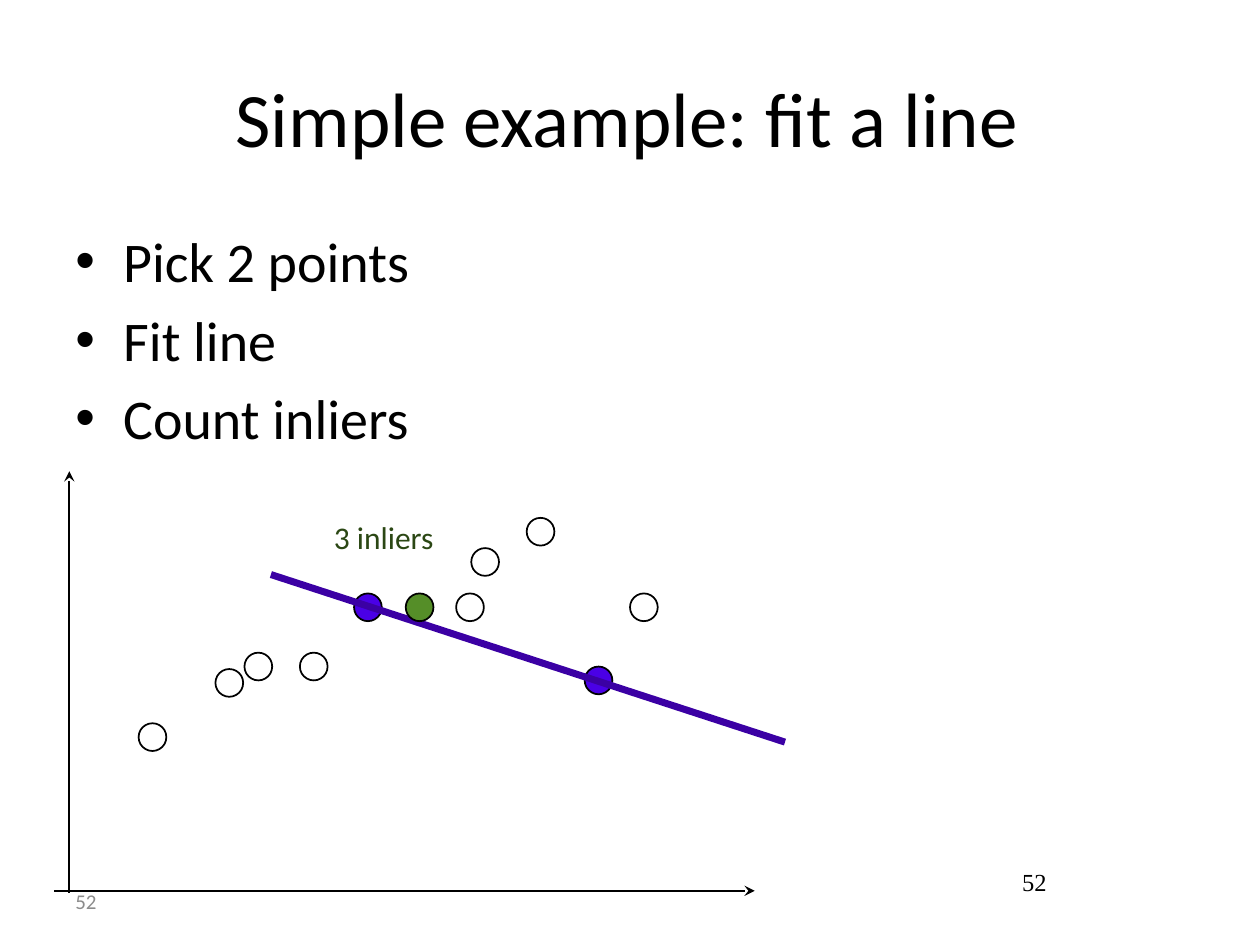
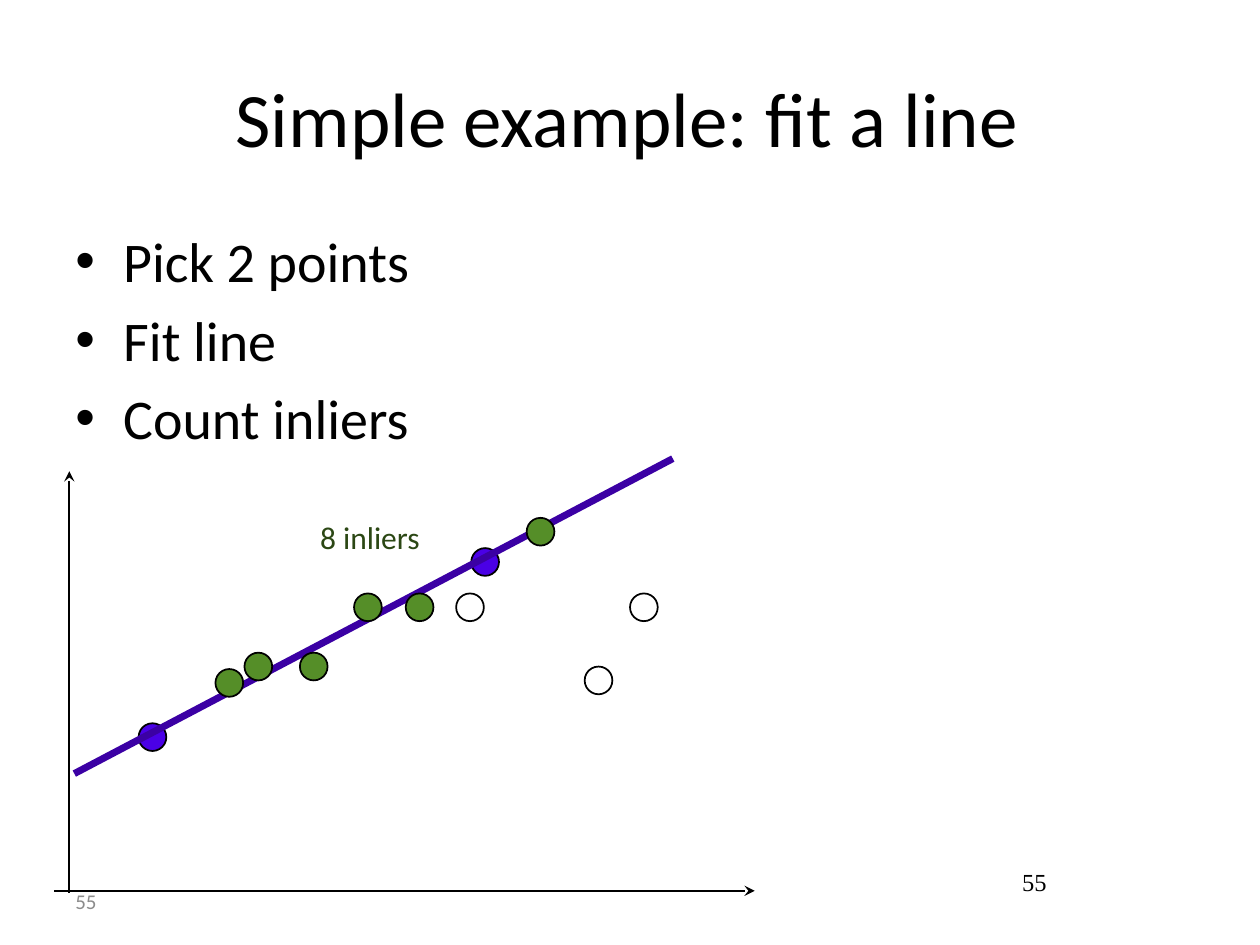
"""Build two slides that fit a line to points and count the inliers."""
import dataclasses

import pptx
import pptx.dml.color
import pptx.enum.shapes
import pptx.enum.text
import pptx.oxml.ns
import pptx.util
from lxml import etree

Inches = pptx.util.Inches
Pt = pptx.util.Pt
ALIGN = pptx.enum.text.PP_ALIGN
ANCHOR = pptx.enum.text.MSO_ANCHOR


@dataclasses.dataclass(frozen=True)
class Theme:
    """Hold the fonts, colours and sizes shared by the slides."""
    font: str = "Calibri"
    number_font: str = "Times New Roman"
    black: str = "000000"
    white: str = "FFFFFF"
    footer: str = "8C8C8C"
    sample: str = "4A00E6"
    fitted_line: str = "3B00A4"
    inlier: str = "558E28"
    inlier_label: str = "2B4714"
    title_size: int = 44
    bullet_size: int = 32
    label_size: int = 18
    number_size: int = 14
    footer_size: int = 12
    thin: int = 1
    thick: int = 4
    point_size: float = 0.22


THEME = Theme()
TITLE = "Simple example: fit a line"
STEPS = ("Pick 2 points", "Fit line", "Count inliers")
PLACEHOLDER_INSETS = (0.1, 0.05, 0.14, 0.05)

POINTS = {
    "lowest": (1.1, 5.74),
    "left": (1.71, 5.31),
    "left pair": (1.94, 5.18),
    "right pair": (2.38, 5.18),
    "row first": (2.81, 4.71),
    "row second": (3.22, 4.71),
    "row third": (3.62, 4.71),
    "upper": (3.74, 4.35),
    "highest": (4.18, 4.11),
    "below line": (4.64, 5.29),
    "far right": (5, 4.71),
}


@dataclasses.dataclass(frozen=True)
class Fit:
    """Describe one line fit and the points that support it."""
    number: int
    samples: tuple
    inliers: tuple
    start: tuple
    end: tuple
    label: str
    label_left: float


FITS = (
    Fit(52, ("row first", "below line"), ("row second",),
        (2.15, 4.56), (6.23, 5.89), "3 inliers", 2.61),
    Fit(55, ("lowest", "upper"),
        ("left", "left pair", "right pair", "row first", "row second", "highest"),
        (0.59, 6.14), (5.34, 3.64), "8 inliers", 2.5),
)


def rgb(value):
    """Return a colour from its hexadecimal value."""
    return pptx.dml.color.RGBColor.from_string(value)


def add_child(parent, tag, **attributes):
    """Append a DrawingML element to a parent."""
    return etree.SubElement(parent, pptx.oxml.ns.qn(tag), attributes)


def add_text(slide, box, lines, size, color=THEME.black, font=THEME.font,
             align=ALIGN.LEFT, anchor=ANCHOR.TOP, insets=(0.1, 0.05, 0.1, 0.05)):
    """Add a text box with one run per line and return its paragraphs."""
    frame = slide.shapes.add_textbox(*map(Inches, box)).text_frame
    frame.word_wrap = True
    frame.vertical_anchor = anchor
    (frame.margin_left, frame.margin_top,
     frame.margin_right, frame.margin_bottom) = map(Inches, insets)
    for index, line in enumerate(lines):
        paragraph = frame.add_paragraph() if index else frame.paragraphs[0]
        paragraph.alignment = align
        run = paragraph.add_run()
        run.text = line
        run.font.name = font
        run.font.size = Pt(size)
        run.font.color.rgb = rgb(color)
    return frame.paragraphs


def add_bullet(paragraph):
    """Give a paragraph a hanging bullet and proportional space before it."""
    properties = paragraph._p.get_or_add_pPr()
    properties.set("marL", str(Inches(0.38)))
    properties.set("indent", str(Inches(-0.38)))
    add_child(add_child(properties, "a:spcBef"), "a:spcPct", val="20000")
    add_child(properties, "a:buFont", typeface="Arial")
    add_child(properties, "a:buChar", char="•")


def add_line(slide, start, end, color, width, arrow=False):
    """Add a straight line, with an optional arrowhead at its start."""
    connector = slide.shapes.add_connector(
        pptx.enum.shapes.MSO_CONNECTOR.STRAIGHT, *map(Inches, (*start, *end)))
    connector.line.color.rgb = rgb(color)
    connector.line.width = Pt(width)
    if arrow:
        add_child(connector.line._get_or_add_ln(), "a:headEnd", type="stealth")
    add_child(connector._element.spPr, "a:effectLst")


def add_point(shapes, name, color):
    """Add a data point to a slide or a group."""
    left, top = POINTS[name]
    size = THEME.point_size
    point = shapes.add_shape(pptx.enum.shapes.MSO_SHAPE.OVAL,
                             *map(Inches, (left, top, size, size)))
    point.shadow.inherit = False
    point.fill.solid()
    point.fill.fore_color.rgb = rgb(color)
    point.line.color.rgb = rgb(THEME.black)
    point.line.width = Pt(THEME.thin)


def add_frame(slide, number):
    """Add the footer, title, steps and page number."""
    add_text(slide, (0.5, 6.95, 2.33, 0.4), [str(number)], THEME.footer_size,
             THEME.footer, anchor=ANCHOR.MIDDLE)
    add_text(slide, (0.5, 0.3, 9, 1.25), [TITLE], THEME.title_size,
             align=ALIGN.CENTER, anchor=ANCHOR.MIDDLE, insets=PLACEHOLDER_INSETS)
    for paragraph in add_text(slide, (0.5, 1.75, 9, 4.95), STEPS,
                              THEME.bullet_size, insets=PLACEHOLDER_INSETS):
        add_bullet(paragraph)
    add_text(slide, (8.05, 6.83, 0.32, 0.32), [str(number)], THEME.number_size,
             font=THEME.number_font, align=ALIGN.CENTER, insets=(0, 0.05, 0, 0.05))


def add_plot(slide, fit):
    """Add the axes, points, fitted line and inlier count."""
    add_line(slide, (0.55, 3.74), (0.55, 7.09), THEME.black, THEME.thin, arrow=True)
    add_line(slide, (5.99, 7.07), (0.43, 7.07), THEME.black, THEME.thin, arrow=True)
    for name in POINTS:
        if name not in fit.inliers:
            color = THEME.sample if name in fit.samples else THEME.white
            add_point(slide.shapes, name, color)
    add_line(slide, fit.start, fit.end, THEME.fitted_line, THEME.thick)
    add_text(slide, (fit.label_left, 4.11, 1.24, 0.4), [fit.label],
             THEME.label_size, THEME.inlier_label, insets=(0.04, 0, 0.04, 0))
    inlier_group = slide.shapes.add_group_shape()
    for name in fit.inliers:
        add_point(inlier_group.shapes, name, THEME.inlier)


def main():
    """Build and save the presentation."""
    presentation = pptx.Presentation()
    presentation.slide_width = Inches(10)
    presentation.slide_height = Inches(7.5)
    for fit in FITS:
        slide = presentation.slides.add_slide(presentation.slide_layouts[6])
        add_frame(slide, fit.number)
        add_plot(slide, fit)
    presentation.save("out.pptx")


if __name__ == "__main__":
    main()
